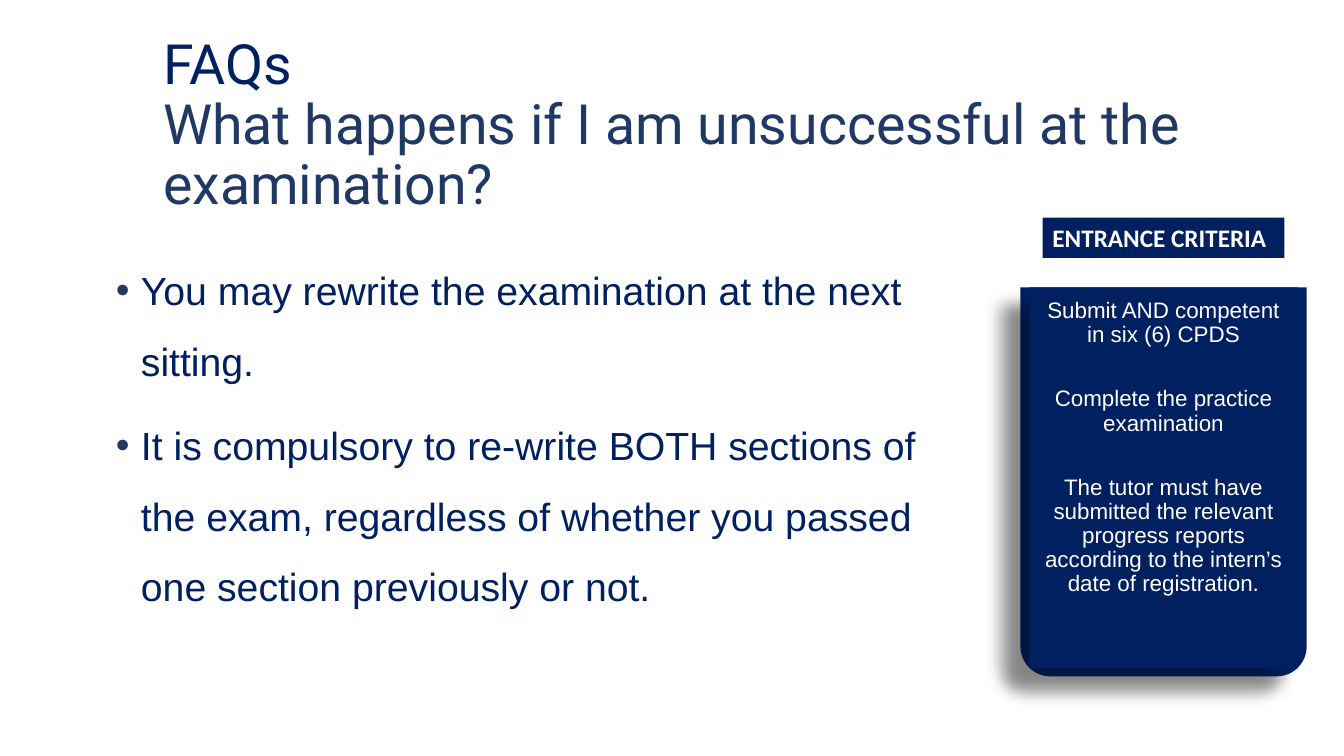
from lxml import etree
from pptx import Presentation
from pptx.dml.color import RGBColor
from pptx.enum.shapes import MSO_SHAPE
from pptx.enum.text import MSO_ANCHOR, MSO_AUTO_SIZE, PP_ALIGN
from pptx.oxml.ns import qn
from pptx.util import Inches, Pt

# Content
TITLE = [("FAQs", "navy"),
         ("What happens if I am unsuccessful at the examination?", "slate")]
ANSWERS = [
    "You may rewrite the examination at the next sitting.",
    "It is compulsory to re-write BOTH sections of the exam, regardless of "
    "whether you passed one section previously or not.",
]
LABEL = "ENTRANCE CRITERIA"
CRITERIA = [
    "Submit AND competent in six (6) CPDS",
    "Complete the practice examination",
    "The tutor must have submitted the relevant progress reports according "
    "to the intern’s date of registration.",
]
COLORS = {"navy": "002060", "slate": "203864", "white": "FFFFFF", "black": "000000"}

# Places: left, top, width, height in inches
TITLE_BOX = (1.52, 0.83, 10.86, 0.85)
ANSWER_BOX = (1.05, 2.36, 8.27, 4.76)
LABEL_BOX = (10.34, 2.16, 2.4, 0.4)
CARD_BOX = (10.12, 2.85, 2.84, 3.86)
CRITERIA_BOX = (10.21, 2.85, 2.66, 3.78)


def rgb(name):
    return RGBColor.from_string(COLORS[name])


def add_run(p, text, size, font, color, bold=False):
    r = p.add_run()
    r.text = text
    r.font.size = Pt(size)
    r.font.name = font
    r.font.bold = bold
    r.font.color.rgb = rgb(color)


def add_text_box(box):
    tf = s.shapes.add_textbox(*map(Inches, box)).text_frame
    tf.word_wrap = True
    return tf


def add_panel(shapes, kind, box):
    sp = shapes.add_shape(kind, *map(Inches, box))
    sp.shadow.inherit = False
    sp.fill.solid()
    sp.fill.fore_color.rgb = rgb("navy")
    sp.line.fill.background()
    return sp


def add_shadow(sp):
    effects = sp._element.spPr.find(qn("a:effectLst"))
    shadow = etree.SubElement(effects, qn("a:outerShdw"), blurRad=str(Pt(11.8)),
                              dist=str(Pt(19.7)), dir=str(141 * 60000),
                              algn="ctr", rotWithShape="0")
    color = etree.SubElement(shadow, qn("a:srgbClr"), val=COLORS["black"])
    etree.SubElement(color, qn("a:alpha"), val="28000")


def add_bullet(p):
    pPr = p._p.get_or_add_pPr()
    pPr.set("marL", str(Inches(0.25)))
    pPr.set("indent", str(-Inches(0.25)))
    color = etree.SubElement(pPr, qn("a:buClr"))
    etree.SubElement(color, qn("a:srgbClr"), val=COLORS["slate"])
    etree.SubElement(pPr, qn("a:buFont"), typeface="Arial")
    etree.SubElement(pPr, qn("a:buChar"), char="•")


def paragraphs(tf, texts):
    for i, text in enumerate(texts):
        yield i, (tf.add_paragraph() if i else tf.paragraphs[0]), text


prs = Presentation()
prs.slide_width, prs.slide_height = Inches(13.33), Inches(7.5)
s = prs.slides.add_slide(prs.slide_layouts[6])

# Title
tf = add_text_box(TITLE_BOX)
tf.vertical_anchor = MSO_ANCHOR.MIDDLE
p = tf.paragraphs[0]
p.line_spacing = 0.9
for i, (text, color) in enumerate(TITLE):
    if i:
        p.add_line_break()
    add_run(p, text, 39.6, "Roboto", color)

# Answers
for i, p, text in paragraphs(add_text_box(ANSWER_BOX), ANSWERS):
    add_bullet(p)
    p.line_spacing = 1.5
    if i:
        p.space_before = Pt(10)
    add_run(p, text, 28, "Arial", "navy")

# Criteria card
card = s.shapes.add_group_shape()
back = add_panel(card.shapes, MSO_SHAPE.ROUND_2_SAME_RECTANGLE, CARD_BOX)
back.adjustments[0] = 0.105
back.rotation = 180
front = add_panel(card.shapes, MSO_SHAPE.RECTANGLE, CRITERIA_BOX)
for sp in (back, front):
    add_shadow(sp)
tf = front.text_frame
tf.word_wrap = True
tf.vertical_anchor = MSO_ANCHOR.TOP
tf.margin_left = tf.margin_right = tf.margin_top = tf.margin_bottom = Inches(0.12)
for i, p, text in paragraphs(tf, CRITERIA):
    p.alignment = PP_ALIGN.CENTER
    p.line_spacing = 0.9
    if i:
        p.space_before = Pt(28.5)
    add_run(p, text, 16, "Arial", "white")

# Card label
tf = add_panel(s.shapes, MSO_SHAPE.RECTANGLE, LABEL_BOX).text_frame
tf.word_wrap = False
tf.auto_size = MSO_AUTO_SIZE.SHAPE_TO_FIT_TEXT
tf.vertical_anchor = MSO_ANCHOR.TOP
p = tf.paragraphs[0]
p.alignment = PP_ALIGN.LEFT
add_run(p, LABEL, 18, "Calibri", "white", bold=True)

prs.save("out.pptx")
